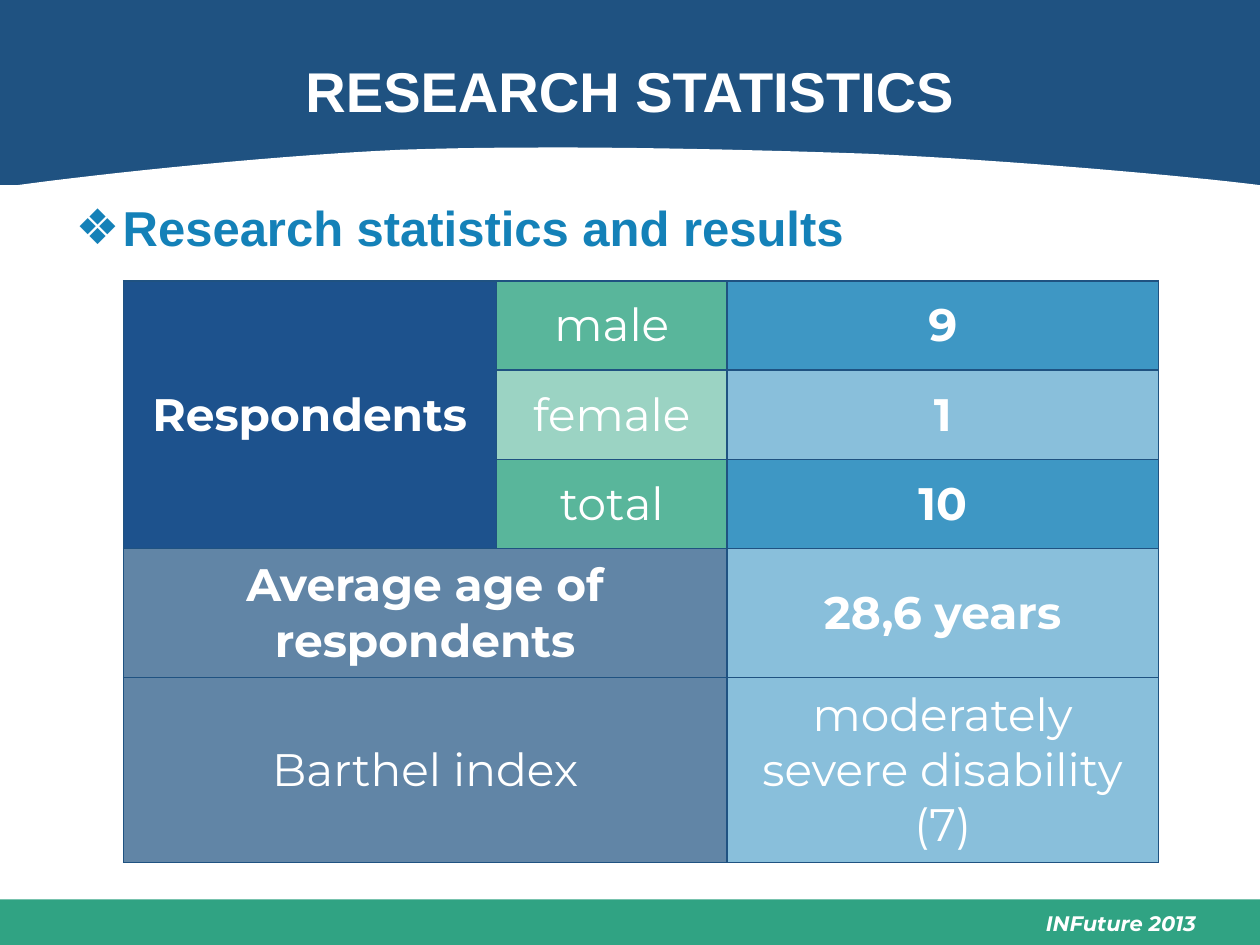
from lxml import etree
from pptx import Presentation
from pptx.dml.color import RGBColor
from pptx.enum.shapes import MSO_SHAPE as Preset
from pptx.enum.text import MSO_ANCHOR as Anchor, PP_ALIGN as Align
from pptx.oxml import parse_xml
from pptx.oxml.ns import nsdecls, qn
from pptx.util import Cm, Pt

NAVY = RGBColor(0x1F, 0x52, 0x81)
DEEP_BLUE = RGBColor(0x1D, 0x52, 0x8D)
BLUE = RGBColor(0x14, 0x81, 0xB8)
GREEN = RGBColor(0x30, 0xA4, 0x83)
FOOTER_GREEN = RGBColor(0x30, 0xA3, 0x83)
WHITE = RGBColor(0xFF, 0xFF, 0xFF)


def add_text(paragraph, text, font_name, size, color, bold=True, italic=False):
    run = paragraph.add_run()
    run.text = text
    run.font.name = font_name
    run.font.size = Pt(size)
    run.font.color.rgb = color
    run.font.bold = bold
    run.font.italic = italic


def fill_shape(shape, color):
    shape.shadow.inherit = False
    shape.fill.solid()
    shape.fill.fore_color.rgb = color
    shape.line.fill.background()


presentation = Presentation()
presentation.slide_width = Cm(25.4)
presentation.slide_height = Cm(19.05)
slide = presentation.slides.add_slide(presentation.slide_layouts[1])
shapes = slide.shapes
title, body = shapes.title, slide.placeholders[1]

# Footer and header bands
for top, height, color in [(18.13, 0.92, FOOTER_GREEN), (0, 3.73, NAVY)]:
    band = shapes.add_shape(Preset.RECTANGLE, 0, Cm(top), Cm(25.4), Cm(height))
    fill_shape(band, color)

# Footer text
footer = shapes.add_textbox(Cm(16.94), Cm(18.24), Cm(7.42), Cm(0.77))
footer.text_frame.word_wrap = True
paragraph = footer.text_frame.paragraphs[0]
paragraph.alignment = Align.RIGHT
add_text(paragraph, "INFuture 2013", "Montserrat", 12, WHITE, italic=True)

# White arch below the header: Bézier segments sampled as short lines
start = (0.03, 3.78)
segments = [
    [(1.35, 3.58), (5.18, 3.15), (8.08, 3.02)],
    [(11.0, 2.92), (14.61, 3.0), (17.48, 3.1)],
    [(20.37, 3.23), (24.05, 3.56), (25.37, 3.73)],
]
arch_points = [start]
for control_1, control_2, end in segments:
    for step in range(1, 17):
        t = step / 16
        weights = ((1 - t) ** 3, 3 * t * (1 - t) ** 2, 3 * t**2 * (1 - t), t**3)
        corners = list(zip(start, control_1, control_2, end))
        arch_points.append(
            tuple(sum(w * c for w, c in zip(weights, axis)) for axis in corners)
        )
    start = end
arch_points.append((25.4, 4.22))
builder = shapes.build_freeform(0, Cm(4.19))
builder.add_line_segments([(Cm(x), Cm(y)) for x, y in arch_points], close=True)
fill_shape(builder.convert_to_shape(), WHITE)

# Title and body, brought in front of the bands
for placeholder, top, height in [(title, 0.89, 1.85), (body, 3.86, 13.69)]:
    placeholder.left, placeholder.top = Cm(1.27), Cm(top)
    placeholder.width, placeholder.height = Cm(22.86), Cm(height)
    shapes._spTree.append(placeholder._element)

title.text_frame.vertical_anchor = Anchor.MIDDLE
paragraph = title.text_frame.paragraphs[0]
paragraph.alignment = Align.CENTER
add_text(paragraph, "RESEARCH STATISTICS", "Arial", 32, WHITE)

paragraph = body.text_frame.paragraphs[0]
add_text(paragraph, "Research statistics and results", "Arial", 28, BLUE)
properties = paragraph._p.get_or_add_pPr()
properties.set("marL", str(Cm(0.95)))
properties.set("indent", str(-Cm(0.95)))
bullet_color = etree.SubElement(properties, qn("a:buClr"))
etree.SubElement(bullet_color, qn("a:srgbClr"), val=str(BLUE))
etree.SubElement(properties, qn("a:buFont"), typeface="Arial")
etree.SubElement(properties, qn("a:buChar"), char="❖")

# Statistics table
column_widths = [7.52, 4.65, 8.69]
row_heights = [1.8, 1.8, 1.8, 2.6, 3.73]
table = shapes.add_table(
    5, 3, Cm(2.49), Cm(5.66), Cm(sum(column_widths)), Cm(sum(row_heights))
).table
table.first_row = table.horz_banding = False
for column, width in zip(table.columns, column_widths):
    column.width = Cm(width)
for row, height in zip(table.rows, row_heights):
    row.height = Cm(height)
table.cell(0, 0).merge(table.cell(2, 0))
for row_index in (3, 4):
    table.cell(row_index, 0).merge(table.cell(row_index, 1))

# Row, column, text, bold, fill colour, opacity in percent
entries = [
    (0, 0, "Respondents", True, DEEP_BLUE, 100),
    (0, 1, "male", False, GREEN, 80),
    (0, 2, "9", True, BLUE, 82),
    (1, 1, "female", False, GREEN, 48),
    (1, 2, "1", True, BLUE, 50),
    (2, 1, "total", False, GREEN, 80),
    (2, 2, "10", True, BLUE, 82),
    (3, 0, "Average age of respondents", True, NAVY, 70),
    (3, 2, "28,6 years", True, BLUE, 50),
    (4, 0, "Barthel index", False, NAVY, 70),
    (4, 2, "moderately severe disability (7)", False, BLUE, 50),
]
for row_index, column_index, text, bold, color, opacity in entries:
    cell = table.cell(row_index, column_index)
    cell.vertical_anchor = Anchor.MIDDLE
    cell.margin_left = cell.margin_right = Cm(0.38)
    cell.margin_top = cell.margin_bottom = Cm(0.18)
    paragraph = cell.text_frame.paragraphs[0]
    paragraph.alignment = Align.CENTER
    add_text(paragraph, text, "Montserrat", 26, WHITE, bold)
    cell.fill.solid()
    cell.fill.fore_color.rgb = color
    fill_color = cell._tc.tcPr.find(".//" + qn("a:srgbClr"))
    etree.SubElement(fill_color, qn("a:alpha"), val=str(opacity * 1000))

# Cell borders, which must precede the fill
for cell in table.iter_cells():
    cell_properties = cell._tc.get_or_add_tcPr()
    for position, side in enumerate(("lnL", "lnR", "lnT", "lnB")):
        border = parse_xml(
            f'<a:{side} {nsdecls("a")} w="{Pt(1)}"><a:solidFill>'
            f'<a:srgbClr val="{NAVY}"/></a:solidFill></a:{side}>'
        )
        cell_properties.insert(position, border)

presentation.save("out.pptx")
